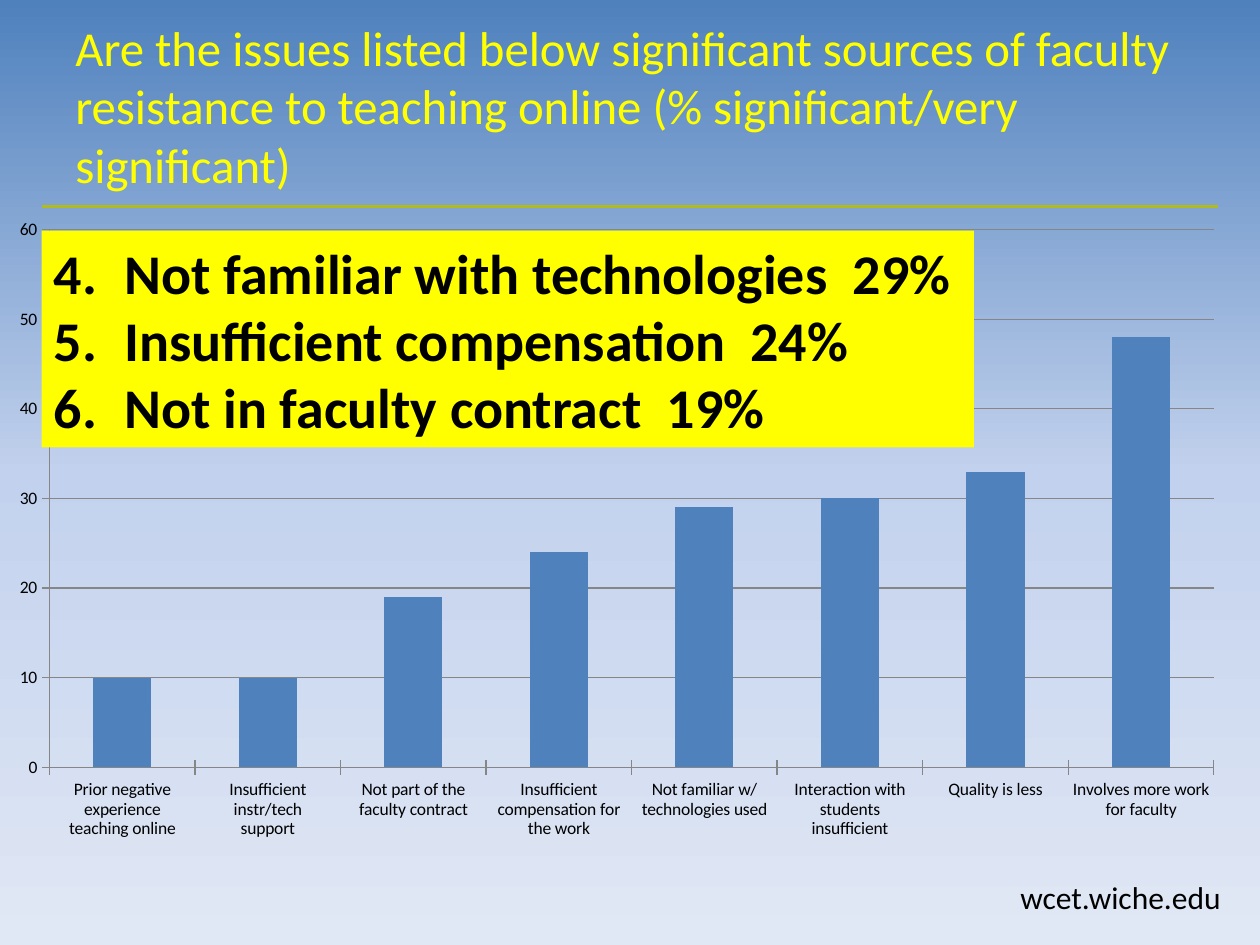
from copy import deepcopy
from dataclasses import dataclass

from lxml import etree
from pptx import Presentation
from pptx.chart.data import CategoryChartData
from pptx.dml.color import RGBColor
from pptx.enum.chart import XL_CHART_TYPE, XL_TICK_MARK
from pptx.enum.shapes import MSO_CONNECTOR, MSO_SHAPE
from pptx.enum.text import MSO_ANCHOR, MSO_AUTO_SIZE, PP_ALIGN
from pptx.oxml import parse_xml
from pptx.oxml.ns import nsdecls, qn
from pptx.util import Inches, Pt

COLUMN = XL_CHART_TYPE.COLUMN_CLUSTERED
CROSS = XL_TICK_MARK.CROSS
STRAIGHT = MSO_CONNECTOR.STRAIGHT
RECTANGLE = MSO_SHAPE.RECTANGLE
MIDDLE = MSO_ANCHOR.MIDDLE
LEFT = PP_ALIGN.LEFT
FIT_SHAPE = MSO_AUTO_SIZE.SHAPE_TO_FIT_TEXT

FONT = "Calibri"
COLORS = {
    "text": "000000",
    "highlight": "FFFF00",
    "rule": "B2BB1C",
    "bar": "4F81BD",
    "axis": "868686",
}
BACKGROUND = [(0, "4F81BD"), (0.5, "C2D1ED"), (1, "E1E8F5")]
TITLE = ("Are the issues listed below significant sources of faculty resistance "
         "to teaching online (% significant/very significant)")
FOOTER = "wcet.wiche.edu"
FIRST_NUMBER = 4
RANKED_ISSUES = [
    "Not familiar with technologies  29%",
    "Insufficient compensation  24%",
    "Not in faculty contract  19%",
]


@dataclass
class Issue:
    label: str
    percent: int


@dataclass
class Box:
    left: float
    top: float
    width: float
    height: float

    def emu(self) -> tuple:
        return tuple(Inches(v) for v in (self.left, self.top, self.width, self.height))


ISSUES = [
    Issue("Prior negative experience teaching online", 10),
    Issue("Insufficient instr/tech support", 10),
    Issue("Not part of the faculty contract", 19),
    Issue("Insufficient compensation for the work", 24),
    Issue("Not familiar w/technologies used", 29),
    Issue("Interaction with students insufficient", 30),
    Issue("Quality is less", 33),
    Issue("Involves more work for faculty", 48),
]
PLOT_AREA = {"x": 0.04, "y": 0.03, "w": 0.94, "h": 0.84}


def rgb(name: str) -> RGBColor:
    return RGBColor.from_string(COLORS[name])


def add_run(p, text: str, size: float, color: str, bold: bool = False) -> None:
    r = p.add_run()
    r.text = text
    r.font.name = FONT
    r.font.size = Pt(size)
    r.font.bold = bold
    r.font.color.rgb = rgb(color)


def paint_background(s) -> None:
    fill = s.background.fill
    fill.gradient()
    fill.gradient_angle = 270
    stops = s._element.find(".//" + qn("a:gsLst"))
    stops.insert(1, deepcopy(stops[0]))
    for stop, (position, color) in zip(fill.gradient_stops, BACKGROUND):
        stop.position = position
        stop.color.rgb = RGBColor.from_string(color)


def add_rule(s, left: float, right: float, y: float) -> None:
    line = s.shapes.add_connector(STRAIGHT, Inches(left), Inches(y), Inches(right), Inches(y))
    line.line.color.rgb = rgb("rule")
    line.line.width = Pt(1.5)
    etree.SubElement(line._element.spPr, qn("a:effectLst"))


def add_text(s, box: Box, text: str, size: float, color: str):
    tf = s.shapes.add_textbox(*box.emu()).text_frame
    tf.word_wrap = True
    add_run(tf.paragraphs[0], text, size, color)
    return tf


def set_plot_area(chart) -> None:
    """Fix the inner plot area as fractions of the chart."""
    parts = '<c:layoutTarget val="inner"/><c:xMode val="edge"/><c:yMode val="edge"/>'
    parts += "".join(f'<c:{key} val="{value}"/>' for key, value in PLOT_AREA.items())
    layout = parse_xml(f'<c:layout {nsdecls("c")}><c:manualLayout>{parts}'
                       "</c:manualLayout></c:layout>")
    plot_area = chart._chartSpace.chart.plotArea
    for old in plot_area.findall(qn("c:layout")):
        plot_area.remove(old)
    plot_area.insert(0, layout)


def add_issue_chart(s, box: Box) -> None:
    data = CategoryChartData(number_format="0")
    data.categories = [issue.label for issue in ISSUES]
    data.add_series("Series 1", [issue.percent for issue in ISSUES])
    chart = s.shapes.add_chart(COLUMN, *box.emu(), data).chart
    chart.has_legend = False
    chart.has_title = False
    chart.font.name = FONT
    chart.font.size = Pt(10)
    chart.font.color.rgb = rgb("text")
    plot = chart.plots[0]
    plot.vary_by_categories = False
    plot.gap_width = 150
    fill = plot.series[0].format.fill
    fill.solid()
    fill.fore_color.rgb = rgb("bar")
    for axis in (chart.category_axis, chart.value_axis):
        axis.major_tick_mark = CROSS
        axis.format.line.color.rgb = rgb("axis")
    value_axis = chart.value_axis
    value_axis.minimum_scale, value_axis.maximum_scale = 0, 60
    value_axis.major_unit = 10
    value_axis.has_major_gridlines = True
    value_axis.major_gridlines.format.line.color.rgb = rgb("axis")
    set_plot_area(chart)


def number_paragraph(p, start: int) -> None:
    pPr = p._p.get_or_add_pPr()
    pPr.set("marL", str(Inches(0.56)))
    pPr.set("indent", str(-Inches(0.56)))
    etree.SubElement(pPr, qn("a:buFont"), typeface="+mj-lt")
    etree.SubElement(pPr, qn("a:buAutoNum"), type="arabicPeriod", startAt=str(start))


def add_ranking(s, box: Box) -> None:
    sp = s.shapes.add_shape(RECTANGLE, *box.emu())
    sp.shadow.inherit = False
    sp.fill.solid()
    sp.fill.fore_color.rgb = rgb("highlight")
    sp.line.fill.background()
    tf = sp.text_frame
    tf.word_wrap = False
    tf.auto_size = FIT_SHAPE
    for i, text in enumerate(RANKED_ISSUES):
        p = tf.add_paragraph() if i else tf.paragraphs[0]
        p.alignment = LEFT
        number_paragraph(p, FIRST_NUMBER)
        add_run(p, text, 32, "text", bold=True)


def main() -> None:
    prs = Presentation()
    prs.slide_width, prs.slide_height = Inches(10), Inches(7.5)
    s = prs.slides.add_slide(prs.slide_layouts[6])
    paint_background(s)
    add_rule(s, 0.33, 9.67, 1.64)
    add_text(s, Box(8, 6.92, 1.92, 0.4), FOOTER, 18, "text")
    add_issue_chart(s, Box(0, 1.67, 9.83, 5.08))
    title = add_text(s, Box(0.5, 0.5, 9, 1.14), TITLE, 27.9, "highlight")
    title.vertical_anchor = MIDDLE
    title.margin_bottom = Inches(0.52)
    add_ranking(s, Box(0.33, 1.83, 7.4, 1.72))
    prs.save("out.pptx")


if __name__ == "__main__":
    main()
